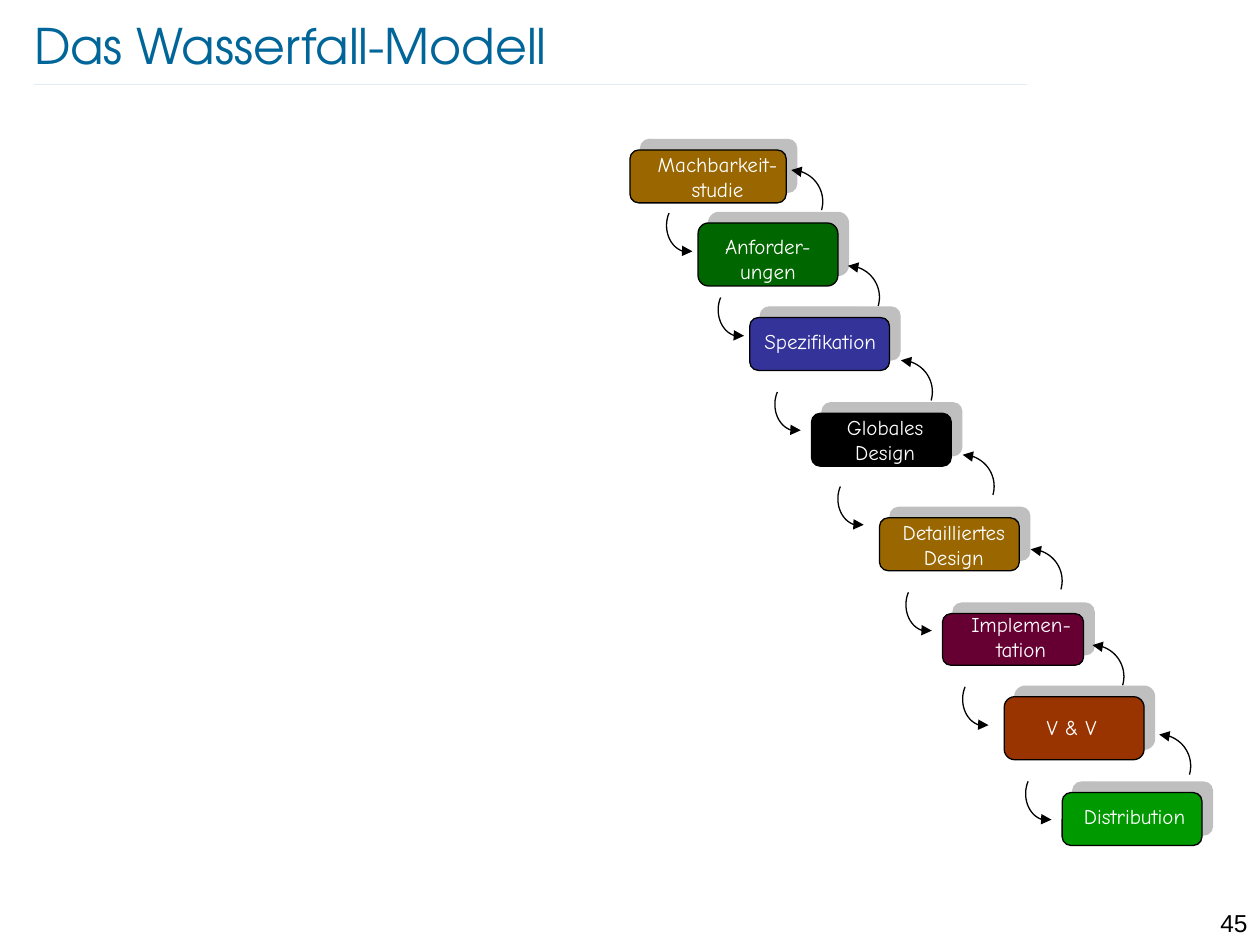
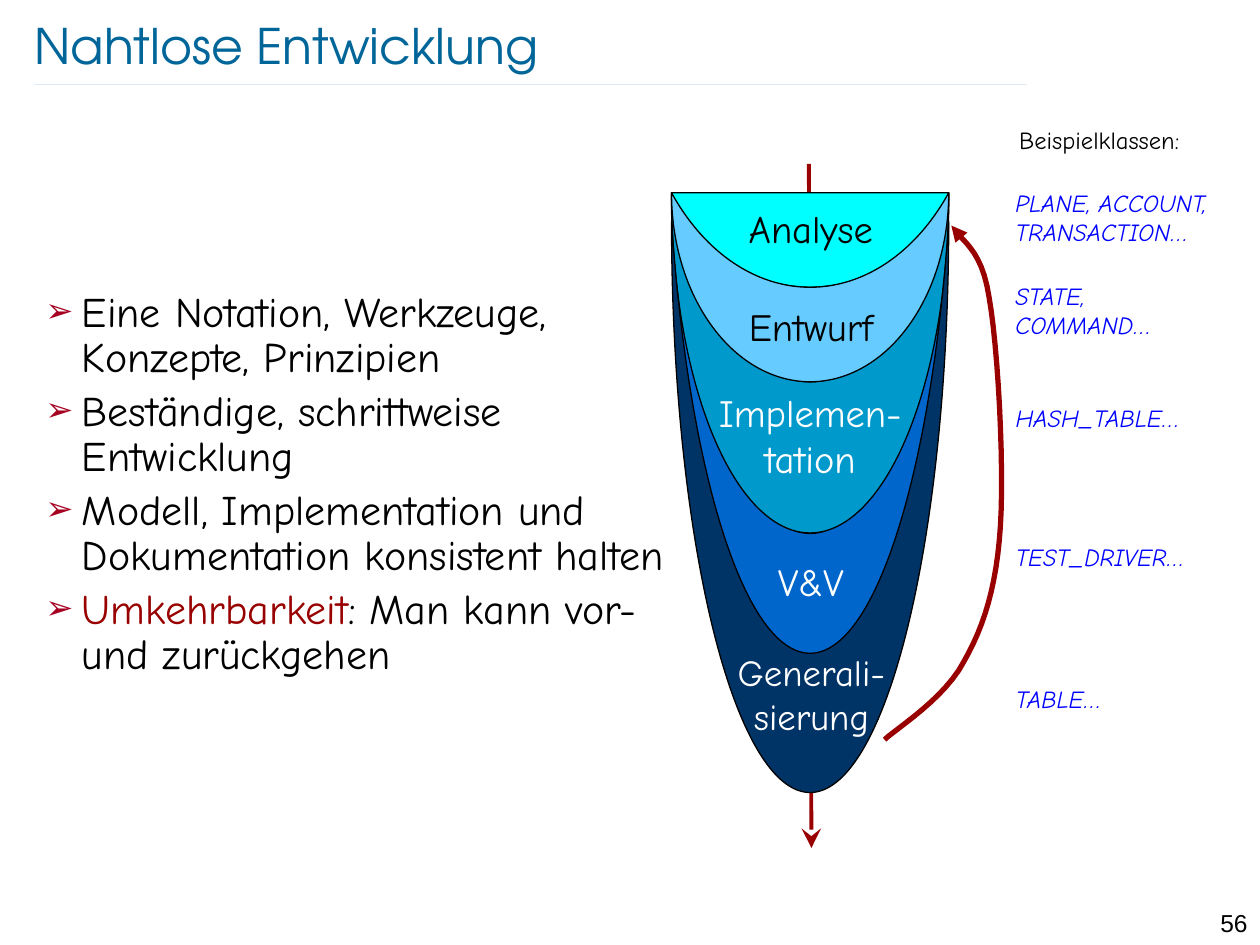
import math

import lxml.etree
import pptx
import pptx.dml.color
import pptx.enum.shapes
import pptx.enum.text
import pptx.oxml.ns
import pptx.util

Inches, Pt = pptx.util.Inches, pptx.util.Pt
SHAPE = pptx.enum.shapes.MSO_SHAPE
ALIGN = pptx.enum.text.PP_ALIGN
STRAIGHT = pptx.enum.shapes.MSO_CONNECTOR.STRAIGHT
SubElement = lxml.etree.SubElement
qn = pptx.oxml.ns.qn
rgb = pptx.dml.color.RGBColor.from_string


class Theme:
    title_font, text_font, number_font = "TeX Gyre Adventor", "Comic Neue", "Arial"
    title_size, body_size, layer_size, small_layer_size = 28, 24, 22, 21
    note_size, stage_size = 14, 12
    teal, black, white = rgb("006699"), rgb("000000"), rgb("FFFFFF")
    red, bullet_red, class_blue = rgb("990000"), "A50021", rgb("0000FF")
    hairline, outline, flow_line, return_line = 0.25, 0.75, 2.25, 3


def write_label(page, at, text, size, color, align=ALIGN.LEFT, inset=True,
                italic=False, font=Theme.text_font):
    box = page.shapes.add_textbox(*map(Inches, at))
    frame = box.text_frame
    frame.word_wrap = True
    if not inset:
        frame.margin_left = frame.margin_right = 0
        frame.margin_top = frame.margin_bottom = 0
    para = frame.paragraphs[0]
    para.text = text
    para.alignment = align
    para.font.name, para.font.size = font, Pt(size)
    para.font.color.rgb, para.font.italic = color, italic


def draw_outline(shape, color, width, end=None, arrow="triangle", size="med"):
    """Set line and optional arrowhead; return the new, empty effect list."""
    shape.line.color.rgb = color
    shape.line.width = Pt(width)
    properties = shape.element.spPr
    if end:
        SubElement(properties.find(qn("a:ln")), qn(f"a:{end}"),
                   type=arrow, w=size, len=size)
    return SubElement(properties, qn("a:effectLst"))


deck = pptx.Presentation()
deck.slide_width, deck.slide_height = Inches(10), Inches(7.5)

# Title, faint rule and page number on every page
pages = []
for layout, title_text, title_width, number in [
    (5, "Das Wasserfall-Modell", 8.69, "45"),
    (1, "Nahtlose Entwicklung", 8.51, "56"),
]:
    page = deck.slides.add_slide(deck.slide_layouts[layout])
    rule = page.shapes.add_connector(
        STRAIGHT, Inches(0.27), Inches(0.67), Inches(8.15), Inches(0.67))
    draw_outline(rule, Theme.teal, Theme.hairline)
    tint = rule.element.spPr.find(".//" + qn("a:srgbClr"))
    SubElement(tint, qn("a:alpha"), val="18000")
    write_label(page, (9.45, 7.16, 0.55, 0.24), number, Theme.note_size,
                Theme.black, ALIGN.RIGHT, font=Theme.number_font)
    title = page.shapes.title
    title.left, title.top = Inches(0.27), Inches(0.12)
    title.width, title.height = Inches(title_width), Inches(0.48)
    frame = title.text_frame
    frame.margin_left = frame.margin_right = frame.margin_top = frame.margin_bottom = 0
    frame.vertical_anchor = pptx.enum.text.MSO_ANCHOR.MIDDLE
    frame.auto_size = pptx.enum.text.MSO_AUTO_SIZE.NONE
    para = frame.paragraphs[0]
    para.text = title_text
    para.alignment = ALIGN.LEFT
    para.font.name, para.font.size = Theme.title_font, Pt(Theme.title_size)
    para.font.color.rgb = Theme.teal
    pages.append(page)
waterfall, seamless = pages

# Curved outlines: page, points, line colour, line width, arrow end, fill
curves = []

# Waterfall: name, colour, box, label, start of the arrow down, tip of the arrow back
stages = [
    ("Machbarkeit-studie", "996600", (5, 1.19, 1.24, 0.42), (5.16, 1.2, 1.07, 0.4),
     None, None),
    ("Anforder-ungen", "006600", (5.54, 1.77, 1.11, 0.5), (5.56, 1.85, 1.07, 0.4),
     (5.29, 1.69), (6.28, 1.35)),
    ("Spezifikation", "333399", (5.95, 2.52, 1.11, 0.42), (5.99, 2.61, 1.04, 0.2),
     (5.7, 2.36), (6.73, 2.11)),
    ("Globales Design", "000000", (6.44, 3.28, 1.11, 0.42), (6.53, 3.29, 0.99, 0.4),
     (6.15, 3.11), (7.15, 2.86)),
    ("Detailliertes Design", "996600", (6.98, 4.11, 1.11, 0.42), (7.05, 4.12, 1.04, 0.4),
     (6.65, 3.86), (7.64, 3.61)),
    ("Implemen-\ntation", "660033", (7.48, 4.87, 1.12, 0.41), (7.49, 4.85, 1.23, 0.4),
     (7.19, 4.7), (8.18, 4.36)),
    ("V & V", "993300", (7.97, 5.53, 1.11, 0.5), (8.01, 5.67, 0.99, 0.2),
     (7.64, 5.45), (8.67, 5.12)),
    ("Distribution", "009900", (8.43, 6.29, 1.11, 0.42), (8.35, 6.38, 1.31, 0.2),
     (8.14, 6.2), (9.2, 5.83)),
]
for name, color, box_at, label_at, down, back in stages:
    box = waterfall.shapes.add_shape(SHAPE.ROUNDED_RECTANGLE, *map(Inches, box_at))
    box.fill.solid()
    box.fill.fore_color.rgb = rgb(color)
    effects = draw_outline(box, Theme.black, Theme.outline)
    shadow = SubElement(effects, qn("a:outerShdw"), dist=str(Pt(8.5)),
                        dir=str(315 * 60000), algn="ctr", rotWithShape="0")
    shade = SubElement(shadow, qn("a:srgbClr"), val="808080")
    SubElement(shade, qn("a:alpha"), val="50000")
    write_label(waterfall, label_at, name, Theme.stage_size, Theme.white,
                ALIGN.CENTER, inset=False)
    if down is None:
        continue
    # Both arcs run clockwise from their arrow tip; angles are in degrees
    for x, y, radius_x, radius_y, start, stop in [
        (down[0] + 0.17, down[1] + 0.1, 0.17, 0.21, 78, 208),
        (back[0], back[1] + 0.25, 0.25, 0.25, 270, 376),
    ]:
        angles = [math.radians(start + (stop - start) * step / 20) for step in range(21)]
        points = [(x + radius_x * math.cos(a), y + radius_y * math.sin(a)) for a in angles]
        curves.append((waterfall, points, Theme.black, Theme.outline, "headEnd", None))

# Seamless development: list
body = seamless.placeholders[1]
body.left, body.top, body.width, body.height = map(Inches, (0.26, 2.26, 5.34, 3.23))
frame = body.text_frame
frame.auto_size = pptx.enum.text.MSO_AUTO_SIZE.NONE
statements = [
    ("", "Eine Notation, Werkzeuge, Konzepte, Prinzipien"),
    ("", "Beständige, schrittweise Entwicklung"),
    ("", "Modell, Implementation und Dokumentation konsistent halten"),
    ("Umkehrbarkeit", ": Man kann vor- und zurückgehen"),
]
for index, (keyword, text) in enumerate(statements):
    para = frame.add_paragraph() if index else frame.paragraphs[0]
    layout = para._p.get_or_add_pPr()
    layout.set("marL", str(Inches(0.29)))
    layout.set("indent", str(Inches(-0.29)))
    bullet_color = SubElement(layout, qn("a:buClr"))
    SubElement(bullet_color, qn("a:srgbClr"), val=Theme.bullet_red)
    SubElement(layout, qn("a:buSzPct"), val="80000")
    SubElement(layout, qn("a:buChar"), char="➢")
    para.line_spacing = 0.9
    para.space_before = Pt(4.8 if index else 0)
    para.font.name, para.font.size = Theme.text_font, Pt(Theme.body_size)
    para.font.color.rgb = Theme.black
    if keyword:
        span = para.add_run()
        span.text = keyword
        span.font.color.rgb = Theme.red
    para.add_run().text = text

# Return arrow, sampled from cubic curves
start = (7.02, 5.87)
points = [start]
for first, second, stop in [
    ((7.13, 5.77), (7.5, 5.54), (7.65, 5.25)),
    ((7.81, 4.97), (7.91, 4.65), (7.94, 4.17)),
    ((7.97, 3.68), (7.92, 2.75), (7.85, 2.36)),
    ((7.79, 1.96), (7.62, 1.91), (7.55, 1.79)),
]:
    for step in range(1, 13):
        t = step / 12
        weights = ((1 - t) ** 3, 3 * t * (1 - t) ** 2, 3 * t * t * (1 - t), t ** 3)
        knots = (start, first, second, stop)
        points.append(tuple(sum(w * knot[axis] for w, knot in zip(weights, knots))
                            for axis in (0, 1)))
    start = stop
curves.append((seamless, points, Theme.red, Theme.return_line, "tailEnd", None))

# Example classes
write_label(seamless, (7.99, 0.94, 1.73, 0.33), "Beispielklassen:",
            Theme.note_size, Theme.black)
for top, width, height, text in [
    (1.49, 1.84, 0.47, "PLANE, ACCOUNT, TRANSACTION…"),
    (2.23, 1.94, 0.47, "STATE,\nCOMMAND…"),
    (3.2, 1.48, 0.24, "HASH_TABLE…"),
    (4.3, 1.59, 0.24, "TEST_DRIVER…"),
    (5.43, 1.59, 0.24, "TABLE…"),
]:
    write_label(seamless, (8.06, top, width, height), text, Theme.note_size,
                Theme.class_blue, inset=False, italic=True)

flow = seamless.shapes.add_connector(
    STRAIGHT, Inches(6.42), Inches(1.3), Inches(6.44), Inches(6.73))
draw_outline(flow, Theme.red, Theme.flow_line, "tailEnd", "stealth", "lg")

# Layers: a circular segment on top, then crescents turned upwards
center, layer_width, rim, sag = 6.43, 2.2, 1.53, 0.75
radius = ((layer_width / 2) ** 2 + sag ** 2) / (2 * sag)
half_angle = math.asin(layer_width / 2 / radius)
angles = [half_angle * step / 16 for step in range(-16, 17)]
points = [(center + radius * math.sin(a), rim + sag - radius + radius * math.cos(a))
          for a in angles]
curves.append((seamless, points, Theme.black, Theme.outline, None, rgb("00FFFF")))

for page, points, color, width, end, fill in curves:
    first, *rest = [(Inches(x), Inches(y)) for x, y in points]
    builder = page.shapes.build_freeform(*first)
    builder.add_line_segments(rest, close=fill is not None)
    curve = builder.convert_to_shape()
    if fill is None:
        curve.fill.background()
    else:
        curve.fill.solid()
        curve.fill.fore_color.rgb = fill
    draw_outline(curve, color, width, end)

for rim, depth, thickness, color in [
    (1.54, 3.86, 0.302, "0066CC"),
    (1.53, 2.7, 0.444, "0099CC"),
    (1.53, 1.5, 0.5, "66CCFF"),
    (1.76, 4.53, 0.244, "003366"),
]:
    crescent = seamless.shapes.add_shape(
        SHAPE.MOON, Inches(center - depth / 2),
        Inches(rim + depth / 2 - layer_width / 2), Inches(depth), Inches(layer_width))
    crescent.rotation = 270
    crescent.adjustments[0] = thickness
    crescent.fill.solid()
    crescent.fill.fore_color.rgb = rgb(color)
    draw_outline(crescent, Theme.black, Theme.outline)

for at, text, size, color in [
    ((5.55, 1.58, 1.77, 0.47), "Analyse", Theme.layer_size, Theme.black),
    ((5.55, 2.36, 1.77, 0.47), "Entwurf", Theme.layer_size, Theme.black),
    ((5.54, 3.04, 1.78, 0.83), "Implemen-\ntation", Theme.layer_size, Theme.white),
    ((5.97, 4.38, 0.93, 0.47), "V&V", Theme.layer_size, Theme.white),
    ((5.64, 5.11, 1.6, 0.8), "Generali-\nsierung", Theme.small_layer_size, Theme.white),
]:
    write_label(seamless, at, text, size, color, ALIGN.CENTER)

deck.save("out.pptx")
